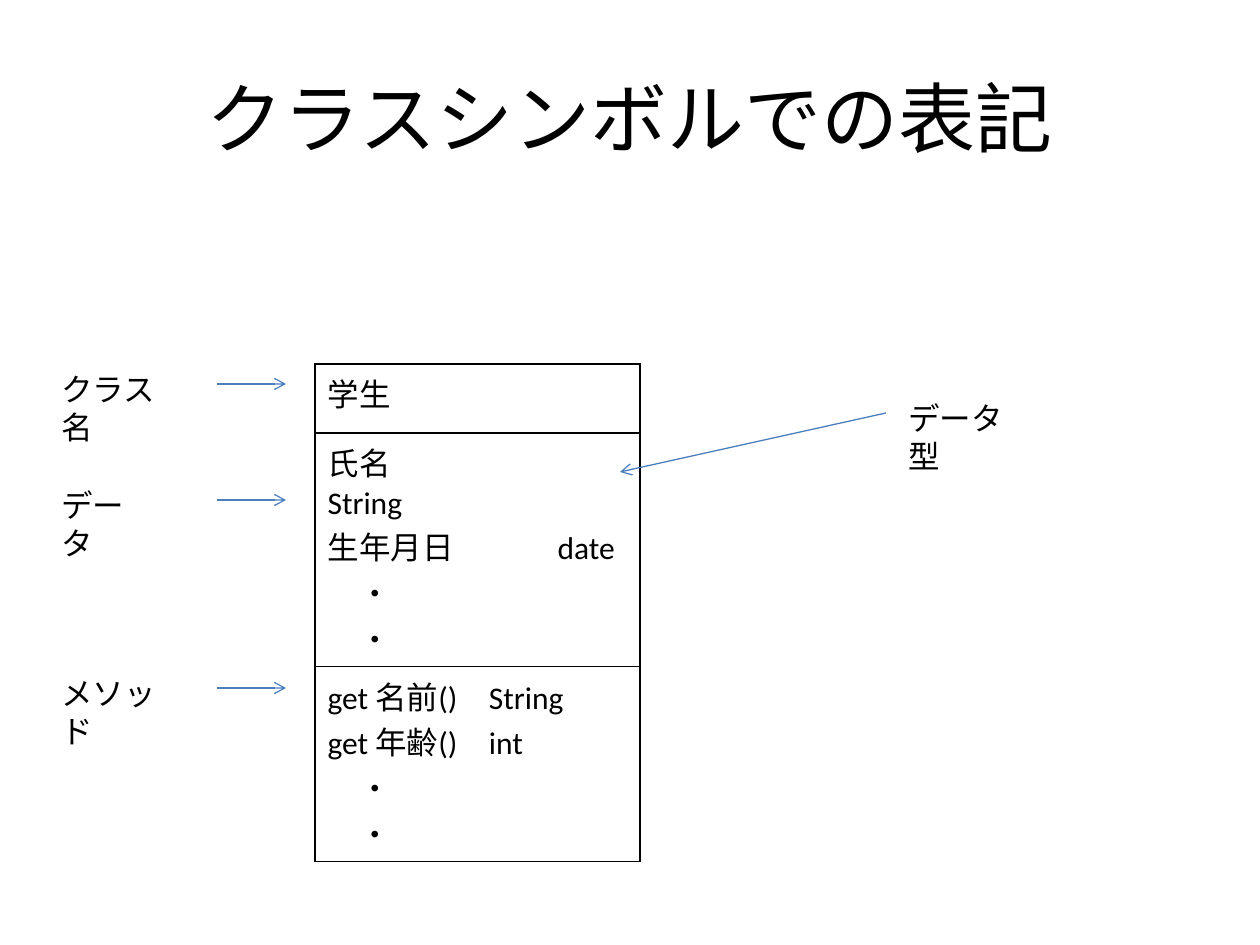
from dataclasses import dataclass

from lxml import etree
from pptx import Presentation
from pptx import util as u
from pptx.dml.color import RGBColor
from pptx.enum import shapes, text
from pptx.oxml.ns import qn


@dataclass
class Theme:
    font: str = "Calibri"
    ink: RGBColor = RGBColor(0, 0, 0)
    paper: RGBColor = RGBColor(255, 255, 255)
    arrow: RGBColor = RGBColor(0x4B, 0x7E, 0xBC)
    head: int = 44
    body: int = 18


theme = Theme()
SCALE = 914400 / 126


def px(*nums):
    """Turn lengths in px into EMU."""
    return [u.Emu(round(n * SCALE)) for n in nums]


def style(frame, size):
    for para in frame.paragraphs:
        para.font.name = theme.font
        para.font.size = u.Pt(size)
        para.font.color.rgb = theme.ink


deck = Presentation()
deck.slide_width, deck.slide_height = px(1260, 945)
slide = deck.slides.add_slide(deck.slide_layouts[5])

# Title
title = slide.shapes.title
title.left, title.top, title.width, title.height = px(63, 38, 1134, 158)
title.text_frame.text = "クラスシンボルでの表記"
title.text_frame.vertical_anchor = text.MSO_ANCHOR.MIDDLE
title.text_frame.paragraphs[0].alignment = text.PP_ALIGN.CENTER
style(title.text_frame, theme.head)

# Class symbol: name, data, methods
rows = [
    (69, ["学生"]),
    (233, ["氏名\vString", "生年月日\tdate", "　・", "　・"]),
    (195, ["get 名前()　String", "get 年齢()　int", "　・", "　・"]),
]
high = sum(row[0] for row in rows)
grid = slide.shapes.add_table(len(rows), 1, *px(315, 364, 325, high)).table
grid.first_row = grid.horz_banding = False
for i, (tall, lines) in enumerate(rows):
    grid.rows[i].height = px(tall)[0]
    cell = grid.cell(i, 0)
    cell.text_frame.text = "\n".join(lines)
    style(cell.text_frame, theme.body)
    for para in cell.text_frame.paragraphs:
        if "\t" in para.text:
            # The tab list must come before the default run format
            tabs = etree.Element(qn("a:tabLst"))
            etree.SubElement(tabs, qn("a:tab"), pos=str(px(230)[0]), algn="l")
            para._p.get_or_add_pPr().insert(0, tabs)
    props = cell._tc.get_or_add_tcPr()
    for side in ("lnL", "lnR", "lnT", "lnB"):
        edge = etree.SubElement(props, qn("a:" + side), w=str(u.Pt(1)))
        fill = etree.SubElement(edge, qn("a:solidFill"))
        etree.SubElement(fill, qn("a:srgbClr"), val=str(theme.ink))
    cell.fill.solid()
    cell.fill.fore_color.rgb = theme.paper

# Labels: wording, left, top, width
labels = [
    ("クラス名", 49, 364, 137),
    ("データ", 49, 480, 111),
    ("メソッド", 49, 668, 120),
    ("データ型", 896, 393, 142),
]
for word, left, top, wide in labels:
    frame = slide.shapes.add_textbox(*px(left, top, wide, 50)).text_frame
    frame.word_wrap = True
    frame.text = word
    style(frame, theme.body)

# Arrows from the labels to the symbol
ends = [(217, y, 286, y) for y in (384, 500, 688)] + [(886, 413, 620, 472)]
for end in ends:
    line = slide.shapes.add_connector(shapes.MSO_CONNECTOR.STRAIGHT, *px(*end))
    line.line.color.rgb = theme.arrow
    line.line.width = u.Pt(0.75)
    etree.SubElement(line.line._get_or_add_ln(), qn("a:tailEnd"), type="arrow")
    etree.SubElement(line._element.spPr, qn("a:effectLst"))

deck.save("out.pptx")
